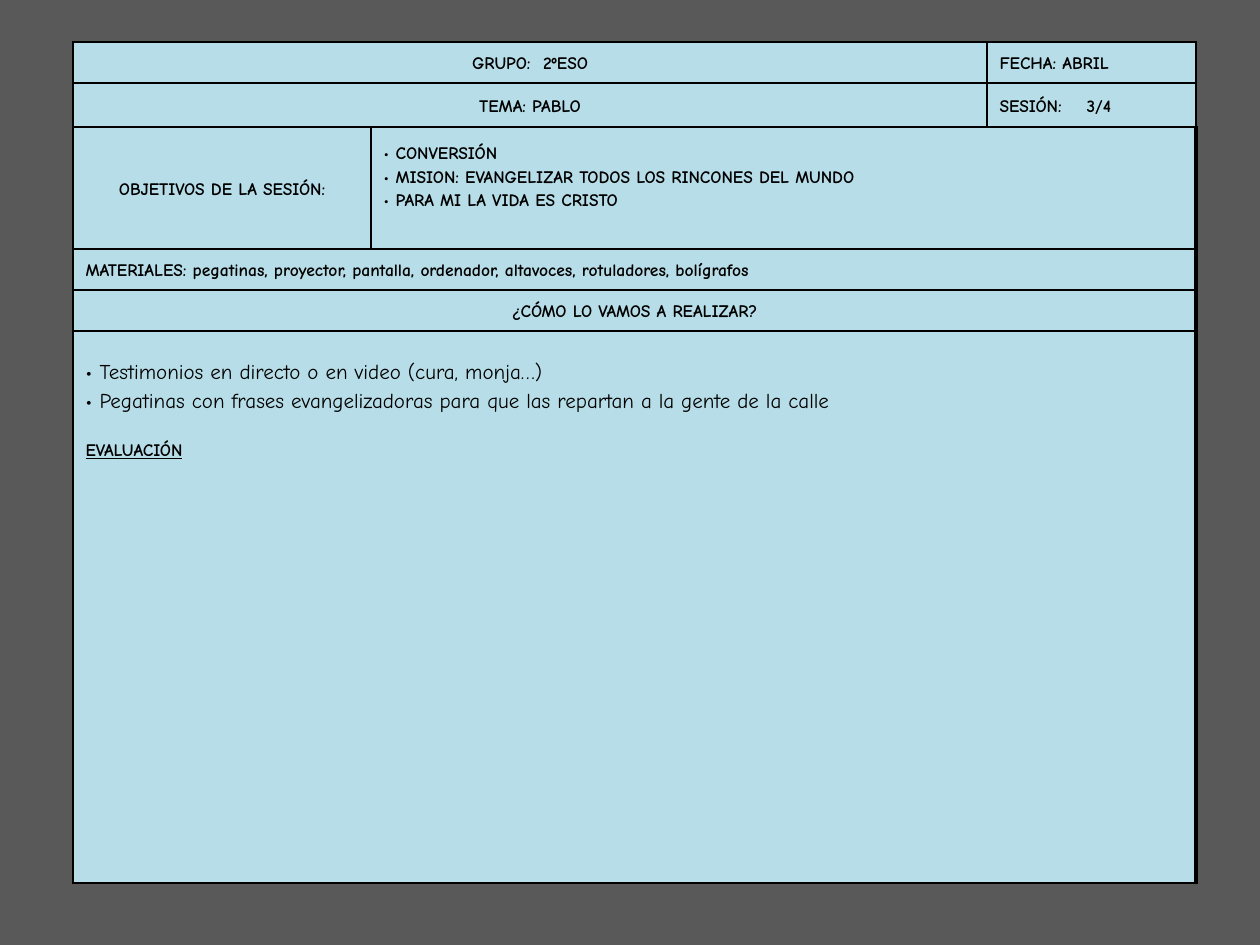
from dataclasses import dataclass

from lxml.etree import SubElement
from pptx import Presentation
from pptx.dml.color import RGBColor
from pptx.enum.text import MSO_ANCHOR as Anchor, PP_ALIGN as Align
from pptx.oxml.ns import qn
from pptx.util import Emu, Pt

PX = 914400 // 126
FONT = "Comic Neue"
COLORS = {"page": "595959", "cell": "B7DEE8", "ink": "000000"}
THIN, THICK = 1, 2.25

# Table grid, in px
LEFT, TOP = 73, 42
COLUMNS = [298, 616, 209]
ROWS = [41, 44, 122, 41, 41, 552]


def px(length: int) -> Emu:
    return Emu(length * PX)


def color(name: str) -> RGBColor:
    return RGBColor.from_string(COLORS[name])


@dataclass
class Line:
    text: str
    size: int = 10
    bold: bool = True
    underline: bool = False
    align: Align = Align.LEFT
    spacing: float = 1.15
    before: float = 0
    hanging: int = 0  # bullet indent in px
    tab: int = 0  # tab stop in px


@dataclass
class Block:
    row: int
    first: int
    last: int
    lines: list[Line]
    anchor: Anchor = Anchor.MIDDLE
    top: int = 6
    bottom: int = 6
    right_border: float = THIN


def heading(text: str) -> list[Line]:
    return [Line(text, align=Align.CENTER)]


def bullets(texts: list[str], hanging: int, size: int = 10, bold: bool = True) -> list[Line]:
    return [Line(text, size, bold, spacing=1, hanging=hanging,
                 before=0.2 * size if index else 0)
            for index, text in enumerate(texts)]


BLOCKS = [
    Block(0, 0, 1, heading("GRUPO:  2ºESO")),
    Block(0, 2, 2, [Line("FECHA: ABRIL")]),
    Block(1, 0, 1, heading("TEMA: PABLO")),
    Block(1, 2, 2, [Line("SESIÓN:\t3/4", tab=87)]),
    Block(2, 0, 0, heading("OBJETIVOS DE LA SESIÓN:")),
    Block(2, 1, 2, bullets(["CONVERSIÓN",
                            "MISION: EVANGELIZAR TODOS LOS RINCONES DEL MUNDO",
                            "PARA MI LA VIDA ES CRISTO"], hanging=12),
          bottom=27, right_border=THICK),
    Block(3, 0, 2, [Line("MATERIALES: pegatinas, proyector, pantalla, ordenador, "
                         "altavoces, rotuladores, bolígrafos")], right_border=THICK),
    Block(4, 0, 2, heading("¿CÓMO LO VAMOS A REALIZAR?"), right_border=THICK),
    Block(5, 0, 2, [
        *bullets(["Testimonios en directo o en video (cura, monja…)",
                  "Pegatinas con frases evangelizadoras para que las repartan "
                  "a la gente de la calle"], hanging=14, size=12, bold=False),
        Line("EVALUACIÓN", underline=True, before=14),
    ], anchor=Anchor.TOP, top=30, right_border=THICK),
]


def set_borders(cell, right: float) -> None:
    properties = cell._tc.get_or_add_tcPr()
    for side, width in zip("LRTB", (THIN, right, THIN, THIN)):
        border = SubElement(properties, qn(f"a:ln{side}"), w=str(Pt(width)))
        fill = SubElement(border, qn("a:solidFill"))
        SubElement(fill, qn("a:srgbClr"), val=COLORS["ink"])


def write_line(para, line: Line) -> None:
    para.alignment = line.align
    para.line_spacing = line.spacing
    para.space_before = Pt(line.before)
    properties = para._p.get_or_add_pPr()
    if line.hanging:
        properties.set("marL", str(px(line.hanging)))
        properties.set("indent", str(-px(line.hanging)))
        SubElement(properties, qn("a:buFont"), typeface=FONT)
        SubElement(properties, qn("a:buChar"), char="•")
    if line.tab:
        stops = SubElement(properties, qn("a:tabLst"))
        SubElement(stops, qn("a:tab"), pos=str(px(line.tab)), algn="l")
    span = para.add_run()
    span.text = line.text
    font = span.font
    font.name, font.size, font.bold = FONT, Pt(line.size), line.bold
    font.underline = line.underline
    font.color.rgb = color("ink")


def fill_block(table, block: Block) -> None:
    cells = [table.cell(block.row, column) for column in range(block.first, block.last + 1)]
    for cell in cells:
        set_borders(cell, block.right_border)
        cell.fill.solid()
        cell.fill.fore_color.rgb = color("cell")
    origin = cells[0]
    if len(cells) > 1:
        origin.merge(cells[-1])
    origin.vertical_anchor = block.anchor
    origin.margin_top, origin.margin_bottom = px(block.top), px(block.bottom)
    frame = origin.text_frame
    for index, line in enumerate(block.lines):
        write_line(frame.add_paragraph() if index else frame.paragraphs[0], line)


def main() -> None:
    deck = Presentation()
    deck.slide_width, deck.slide_height = px(1260), px(945)
    page = deck.slides.add_slide(deck.slide_layouts[6])
    page.background.fill.solid()
    page.background.fill.fore_color.rgb = color("page")

    # Session plan table
    table = page.shapes.add_table(len(ROWS), len(COLUMNS), px(LEFT), px(TOP),
                                  px(sum(COLUMNS)), px(sum(ROWS))).table
    table.first_row = table.horz_banding = False
    for column, width in zip(table.columns, COLUMNS):
        column.width = px(width)
    for row, height in zip(table.rows, ROWS):
        row.height = px(height)
    for block in BLOCKS:
        fill_block(table, block)
    deck.save("out.pptx")


if __name__ == "__main__":
    main()
